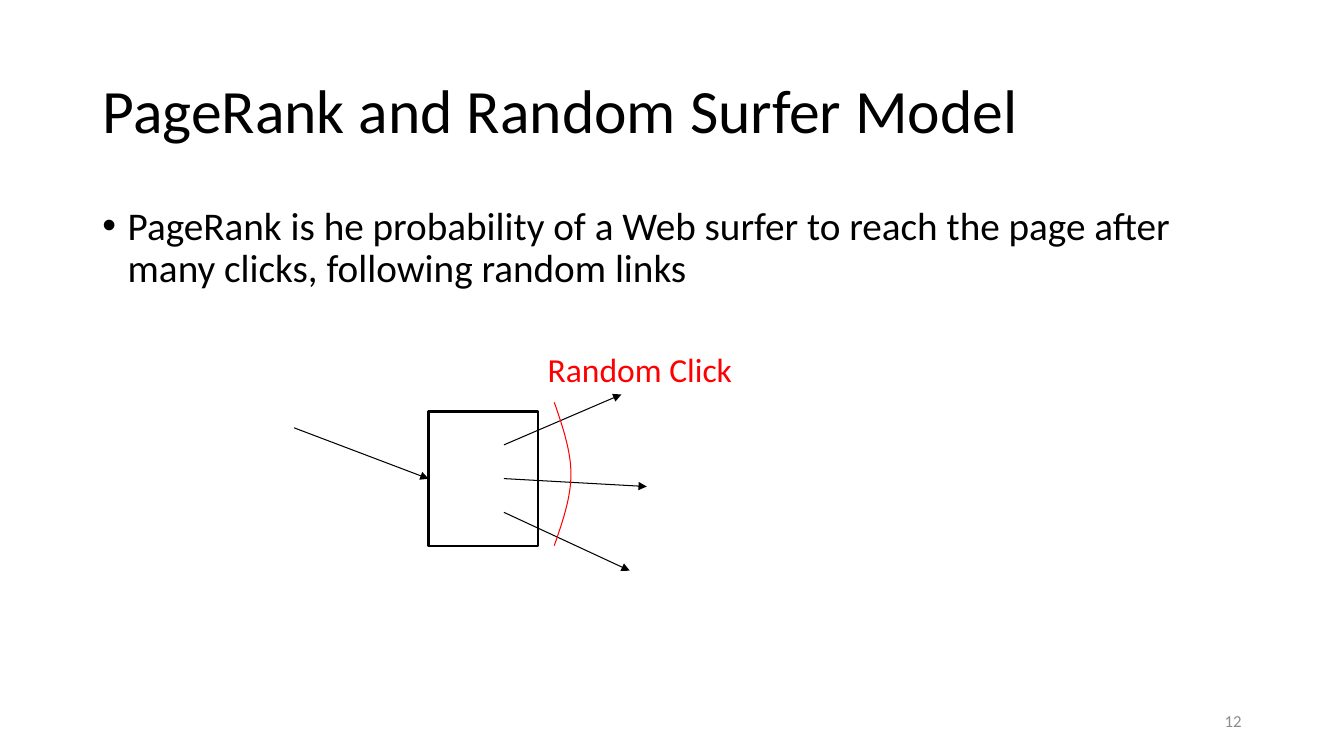
from lxml.etree import SubElement
from pptx import Presentation
from pptx.dml.color import RGBColor
from pptx.enum.shapes import MSO_CONNECTOR as Conn, MSO_SHAPE as Shape
from pptx.enum.text import MSO_ANCHOR as Anchor, MSO_AUTO_SIZE as AutoSize, PP_ALIGN as Align
from pptx.oxml.ns import qn
from pptx.util import Cm, Pt

BLACK = RGBColor(0x00, 0x00, 0x00)
RED = RGBColor(0xFF, 0x00, 0x00)
GRAY = RGBColor(0x8C, 0x8C, 0x8C)


class SlideBuilder:
    """Holds the text style and the slide being built."""

    font = "Calibri"
    thin = Pt(0.75)

    def __init__(self, prs):
        """Add a title-only slide to the presentation."""
        self.slide = prs.slides.add_slide(prs.slide_layouts[5])
        self.shapes = self.slide.shapes

    def add_text(self, tf, text, size, color, align=Align.LEFT, anchor=Anchor.TOP, wrap=True):
        """Put one styled run into a text frame and return its paragraph."""
        tf.word_wrap = wrap
        tf.auto_size = AutoSize.NONE if wrap else AutoSize.SHAPE_TO_FIT_TEXT
        tf.vertical_anchor = anchor
        p = tf.paragraphs[0]
        p.alignment = align
        r = p.add_run()
        r.text = text
        r.font.name = self.font
        r.font.size = Pt(size)
        r.font.color.rgb = color
        return p

    def title(self, text, x, y, w, h):
        """Place and fill the title placeholder."""
        sp = self.shapes.title
        sp.left, sp.top, sp.width, sp.height = Cm(x), Cm(y), Cm(w), Cm(h)
        p = self.add_text(sp.text_frame, text, 44, BLACK, anchor=Anchor.MIDDLE)
        p.line_spacing = 0.9

    def text(self, text, x, y, w, h, size, color, **style):
        """Add a text box and return its paragraph."""
        sp = self.shapes.add_textbox(Cm(x), Cm(y), Cm(w), Cm(h))
        return self.add_text(sp.text_frame, text, size, color, **style)

    def bullet(self, text, x, y, w, h):
        """Add a bulleted paragraph with a hanging indent."""
        p = self.text(text, x, y, w, h, 28, BLACK)
        p.line_spacing = 0.9
        p.space_before = Pt(10)
        pPr = p._p.get_or_add_pPr()
        pPr.set("marL", str(Cm(0.64)))
        pPr.set("indent", str(Cm(-0.64)))
        SubElement(pPr, qn("a:buFont"), typeface="Arial")
        SubElement(pPr, qn("a:buChar"), char="•")

    def box(self, x, y, w, h):
        """Add an unfilled rectangle."""
        sp = self.shapes.add_shape(Shape.RECTANGLE, Cm(x), Cm(y), Cm(w), Cm(h))
        sp.shadow.inherit = False
        sp.fill.background()
        sp.line.color.rgb = BLACK
        sp.line.width = Pt(1.5)
        return sp

    def arrow(self, x1, y1, x2, y2):
        """Add a thin arrow pointing at its second end."""
        cxn = self.shapes.add_connector(Conn.STRAIGHT, Cm(x1), Cm(y1), Cm(x2), Cm(y2))
        cxn.line.color.rgb = BLACK
        cxn.line.width = self.thin
        SubElement(cxn.line._get_or_add_ln(), qn("a:tailEnd"), type="triangle")
        SubElement(cxn._element.spPr, qn("a:effectLst"))
        return cxn

    def curve(self, segments, steps=16):
        """Trace cubic Bezier segments as one smooth open outline."""
        points = []
        for a, b, c, d in segments:
            for i in range(1, steps + 1):
                t = i / steps
                u = 1 - t
                points.append(tuple(
                    Cm(u**3 * k + 3 * u * u * t * m + 3 * u * t * t * n + t**3 * q)
                    for k, m, n, q in zip(a, b, c, d)))
        x, y = segments[0][0]
        builder = self.shapes.build_freeform(Cm(x), Cm(y))
        builder.add_line_segments(points, close=False)
        sp = builder.convert_to_shape()
        sp.shadow.inherit = False
        sp.fill.background()
        sp.line.color.rgb = RED
        sp.line.width = self.thin


def main():
    """Build the slide and save it."""
    prs = Presentation()
    prs.slide_width, prs.slide_height = Cm(33.87), Cm(19.05)
    s = SlideBuilder(prs)

    s.title("PageRank and Random Surfer Model", 2.33, 1.01, 29.21, 3.68)
    s.bullet("PageRank is he probability of a Web surfer to reach the page after "
             "many clicks, following random links", 2.33, 5.07, 29.21, 12.09)

    page = s.box(10.8, 10.37, 2.75, 3.39)
    s.arrow(7.41, 10.78, 10.8, 12.06).end_connect(page, 1)
    for i, (x, y) in enumerate([(15.66, 9.94), (16.3, 12.26), (15.87, 14.38)]):
        s.arrow(12.7, 11.21 + 0.85 * i, x, y)

    middle = (14.39, 11.95)
    s.curve([((13.97, 10.14), (14.18, 10.75), (14.39, 11.36), middle),
             (middle, (14.39, 12.54), (14.18, 13.14), (13.97, 13.75))])
    s.text("Random Click", 13.55, 8.67, 5.38, 1.27, 24, RED, wrap=False)
    s.text("12", 23.92, 17.66, 7.62, 1.01, 12, GRAY, align=Align.RIGHT, anchor=Anchor.MIDDLE)

    prs.save("out.pptx")


if __name__ == "__main__":
    main()
